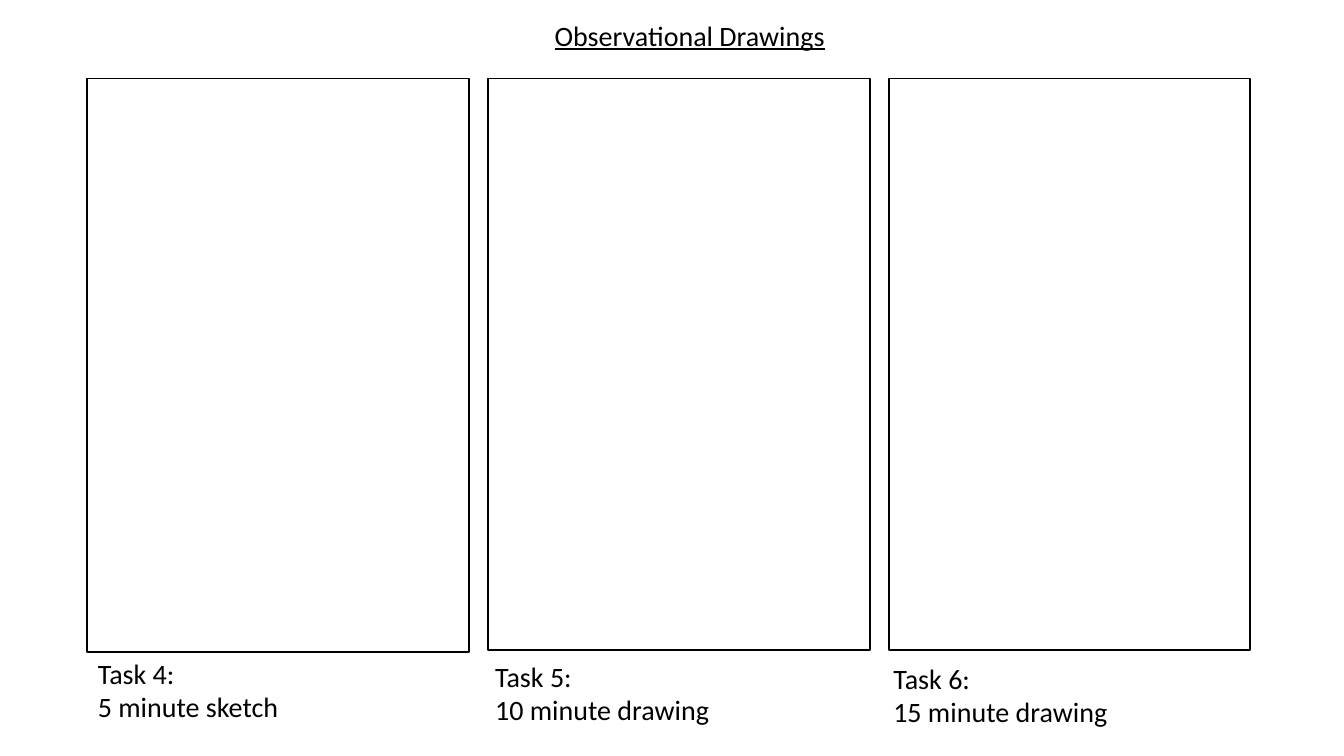
import pptx
import pptx.dml.color
import pptx.enum.shapes
import pptx.enum.text
import pptx.util

# Content: caption lines, then frame width and height, caption offset, top and width
TITLE = "Observational Drawings"
TASKS = [
    (("Task 4:", "5 minute sketch"), (3.79, 5.69), (0.07, 6.47, 3.64)),
    (("Task 5:", "10 minute drawing"), (3.79, 5.67), (0.03, 6.5, 3.79)),
    (("Task 6:", "15 minute drawing"), (3.58, 5.67), (0, 6.52, 3.64)),
]

# Layout in inches
SLIDE_WIDTH, SLIDE_HEIGHT = 13.33, 7.5
FRAME_LEFT, FRAME_TOP, COLUMN_STEP = 0.86, 0.78, 3.98
CAPTION_HEIGHT = 0.98
INSET = 0.04
BLACK = pptx.dml.color.RGBColor(0, 0, 0)

presentation = pptx.Presentation()
presentation.slide_width = pptx.util.Inches(SLIDE_WIDTH)
presentation.slide_height = pptx.util.Inches(SLIDE_HEIGHT)
slide = presentation.slides.add_slide(presentation.slide_layouts[6])


def add_text(lines, left, top, width, height, underline=None,
             alignment=pptx.enum.text.PP_ALIGN.LEFT):
    """Add a text box with one paragraph for each line."""
    box = slide.shapes.add_textbox(*map(pptx.util.Inches, (left, top, width, height)))
    frame = box.text_frame
    frame.word_wrap = True
    frame.margin_left = frame.margin_right = pptx.util.Inches(INSET)
    frame.margin_top = frame.margin_bottom = pptx.util.Inches(INSET)
    frame.text = "\n".join(lines)
    for paragraph in frame.paragraphs:
        paragraph.alignment = alignment
        font = paragraph.runs[0].font
        font.name = "Calibri"
        font.size = pptx.util.Pt(20)
        font.color.rgb = BLACK
        font.underline = underline


# Title
add_text([TITLE], 3.52, 0.14, 6.64, 0.63, underline=True,
         alignment=pptx.enum.text.PP_ALIGN.CENTER)

# Drawing frames with their captions
for column, (lines, frame_size, caption) in enumerate(TASKS):
    left = FRAME_LEFT + column * COLUMN_STEP
    shape = slide.shapes.add_shape(
        pptx.enum.shapes.MSO_SHAPE.RECTANGLE,
        *map(pptx.util.Inches, (left, FRAME_TOP, *frame_size)))
    shape.shadow.inherit = False
    shape.fill.background()
    shape.line.color.rgb = BLACK
    shape.line.width = pptx.util.Pt(1.25)

    offset, caption_top, caption_width = caption
    add_text(lines, left + offset, caption_top, caption_width, CAPTION_HEIGHT)

presentation.save("out.pptx")
